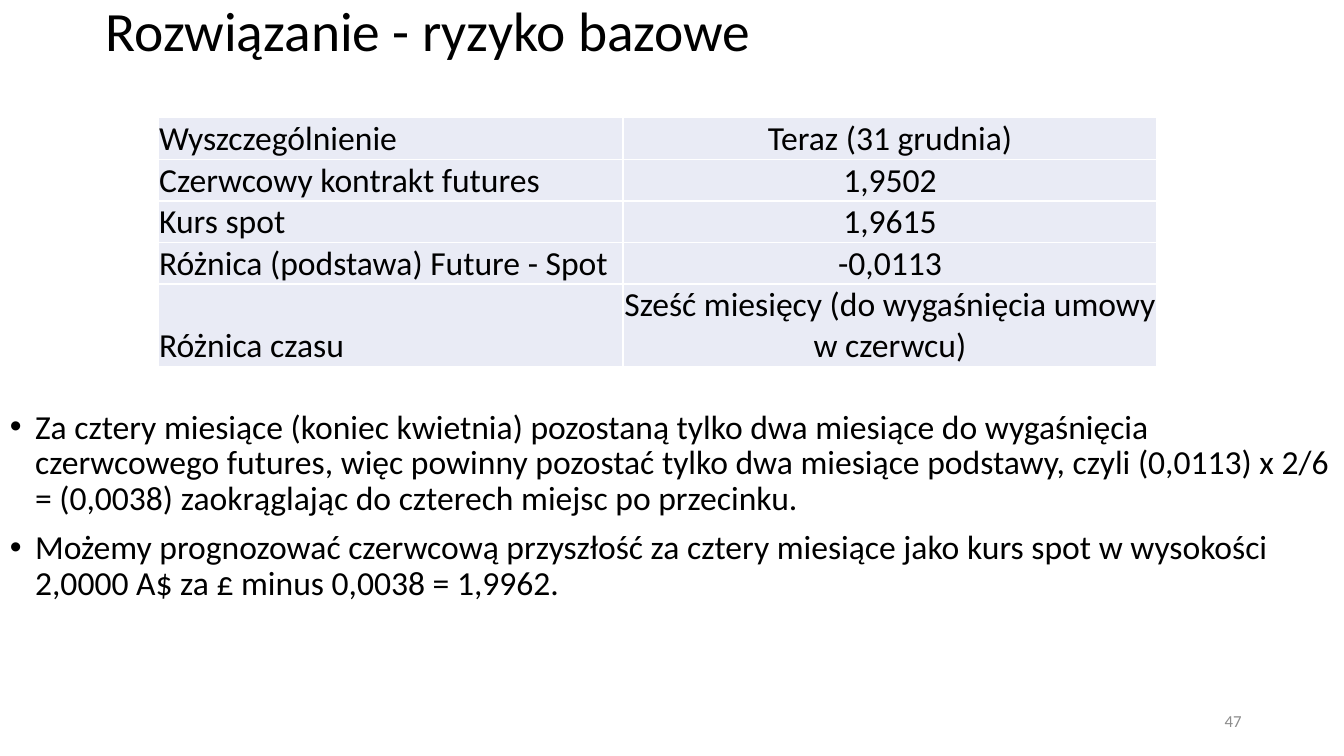
from pptx import Presentation
from pptx.dml.color import RGBColor
from pptx.enum.text import MSO_ANCHOR as Anchor, MSO_AUTO_SIZE as AutoSize, PP_ALIGN as Align
from pptx.oxml.ns import qn
from pptx.util import Pt
from lxml.etree import SubElement


def format_paragraph(paragraph, size, color="000000", align=Align.LEFT):
    paragraph.alignment = align
    paragraph.font.name = "Calibri"
    paragraph.font.size = Pt(size)
    paragraph.font.color.rgb = RGBColor.from_string(color)


presentation = Presentation()
presentation.slide_width, presentation.slide_height = Pt(960), Pt(540)
slide = presentation.slides.add_slide(presentation.slide_layouts[5])

# Title
title = slide.shapes.title
title.left, title.top, title.width, title.height = Pt(68.4), Pt(0), Pt(823), Pt(48)
title.text_frame.text = "Rozwiązanie - ryzyko bazowe"
title.text_frame.vertical_anchor = Anchor.MIDDLE
title.text_frame.auto_size = AutoSize.NONE
title_paragraph = title.text_frame.paragraphs[0]
title_paragraph.line_spacing = 0.9
format_paragraph(title_paragraph, 39.6)

# Bullets below the table
bullets = [
    "Za cztery miesiące (koniec kwietnia) pozostaną tylko dwa miesiące do wygaśnięcia "
    "czerwcowego futures, więc powinny pozostać tylko dwa miesiące podstawy, czyli "
    "(0,0113) x 2/6 = (0,0038) zaokrąglając do czterech miejsc po przecinku.",
    "Możemy prognozować czerwcową przyszłość za cztery miesiące jako kurs spot w wysokości "
    "2,0000 A$ za £ minus 0,0038 = 1,9962.",
]
body = slide.shapes.add_textbox(Pt(0), Pt(290), Pt(960), Pt(250)).text_frame
body.word_wrap = True
for index, text in enumerate(bullets):
    paragraph = body.paragraphs[0] if index == 0 else body.add_paragraph()
    paragraph.text = text
    paragraph.line_spacing = 0.88
    paragraph.space_before = Pt(10 if index else 0)
    properties = paragraph._p.get_or_add_pPr()
    properties.set("marL", str(Pt(18)))
    properties.set("indent", str(-Pt(18)))
    SubElement(properties, qn("a:buFont"), typeface="Arial")
    SubElement(properties, qn("a:buChar"), char="•")
    format_paragraph(paragraph, 24)

# Slide number
number = slide.shapes.add_textbox(Pt(678), Pt(500.5), Pt(216), Pt(28.75)).text_frame
number.word_wrap = True
number.vertical_anchor = Anchor.MIDDLE
number.text = "47"
format_paragraph(number.paragraphs[0], 12, "8C8C8C", Align.RIGHT)

# Table of the basis calculation
rows = [
    ("Wyszczególnienie", "Teraz (31 grudnia)"),
    ("Czerwcowy kontrakt futures", "1,9502"),
    ("Kurs spot", "1,9615"),
    ("Różnica (podstawa) Future - Spot", "-0,0113"),
    ("Różnica czasu", "Sześć miesięcy (do wygaśnięcia umowy w czerwcu)"),
]
row_heights = [29.7] * 4 + [59]
table = slide.shapes.add_table(
    len(rows), 2, Pt(113), Pt(84.2), Pt(713.5), Pt(sum(row_heights))
).table
table.first_row = False
table.horz_banding = False
for column, width in zip(table.columns, (332, 381.5)):
    column.width = Pt(width)
for row, height, texts in zip(table.rows, row_heights, rows):
    row.height = Pt(height)
    for cell, text, align in zip(row.cells, texts, (Align.LEFT, Align.CENTER)):
        cell.text = text
        cell.fill.solid()
        cell.fill.fore_color.rgb = RGBColor.from_string("E9EBF5")
        cell.vertical_anchor = Anchor.BOTTOM
        cell.margin_left = cell.margin_right = cell.margin_top = Pt(0.7)
        cell.margin_bottom = Pt(0)
        format_paragraph(cell.text_frame.paragraphs[0], 24, align=align)

presentation.save("out.pptx")
